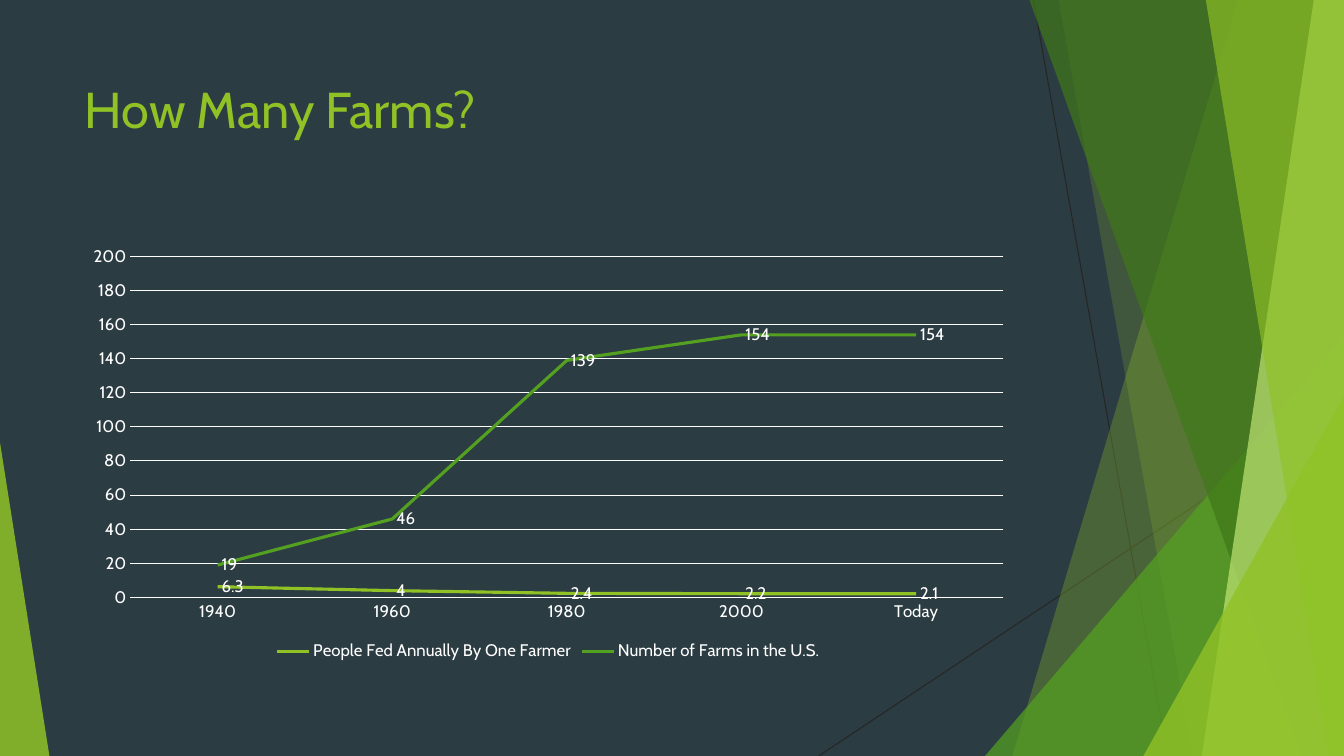
"""Build the "How Many Farms?" slide: a line chart on a faceted green backdrop."""
import pptx
import pptx.chart.data
import pptx.dml.color
import pptx.enum.chart
import pptx.enum.shapes
import pptx.enum.text
import pptx.oxml
import pptx.oxml.ns
import pptx.util

WIDTH, HEIGHT = 13.33, 7.5
FONT = "Cabin"
BACKGROUND, LIME, GREEN, WHITE, DARK = "2C3C43", "90C226", "54A021", "FFFFFF", "262626"

TITLE = "How Many Farms?"
CATEGORIES = ["1940", "1960", "1980", "2000", "Today"]
SERIES = [
    ("People Fed Annually By One Farmer", [6.3, 4, 2.4, 2.2, 2.2], LIME),
    ("Number of Farms in the U.S.", [19, 46, 139, 154, 154], GREEN),
]
TODAY_LABEL = "2.1"

CONTENT_LEFT, CONTENT_WIDTH = 0.74, 9.4
TITLE_TOP, TITLE_HEIGHT = 0.72, 1.44
CHART_TOP, CHART_HEIGHT = 2.36, 4.24

RAYS = [((10.25, 0), (11.58, HEIGHT)), ((WIDTH, 4.03), (8.12, HEIGHT))]
# kind, geometry, colour, opacity: bands give top and bottom x, triangles left, top, apex
FACETS = [
    ("band", (12.28, 10.04), LIME, 30),
    ("band", (10.5, 11.83), LIME, 20),
    ("triangle", (9.77, WIDTH, 3.33, 1), GREEN, 72),
    ("band", (10.21, 12.91), "3F7819", 70),
    ("band", (13.03, 11.92), "C0E474", 70),
    ("band", (11.96, 13.18), LIME, 65),
    ("triangle", (11.34, WIDTH, 3.93, 1), LIME, 80),
    ("triangle", (0, 0.49, 4.39, 0), LIME, 85),
]


def inches(*lengths):
    return [pptx.util.Inches(length) for length in lengths]


def color(value):
    return pptx.dml.color.RGBColor.from_string(value)


def set_font(font, size, value=WHITE):
    font.name = FONT
    font.size = pptx.util.Pt(size)
    font.bold = False
    font.color.rgb = color(value)


def set_line(line, value, width):
    line.color.rgb = color(value)
    line.width = pptx.util.Pt(width)


def add_ray(slide, start, end):
    ray = slide.shapes.add_connector(
        pptx.enum.shapes.MSO_CONNECTOR.STRAIGHT, *inches(*start, *end))
    set_line(ray.line, DARK, 0.75)
    properties = ray._element.spPr
    properties.append(pptx.oxml.parse_xml(
        "<a:effectLst %s/>" % pptx.oxml.ns.nsdecls("a")))


def add_facet(slide, kind, geometry, value, opacity):
    if kind == "band":
        top_x, bottom_x = geometry
        builder = slide.shapes.build_freeform(
            *inches(top_x, 0), scale=1.0)
        corners = [(WIDTH, 0), (WIDTH, HEIGHT), (bottom_x, HEIGHT)]
        builder.add_line_segments([inches(*corner) for corner in corners], close=True)
        facet = builder.convert_to_shape()
    else:
        left, right, top, apex = geometry
        facet = slide.shapes.add_shape(
            pptx.enum.shapes.MSO_SHAPE.ISOSCELES_TRIANGLE,
            *inches(left, top, right - left, HEIGHT - top))
        facet.adjustments[0] = apex
    facet.shadow.inherit = False
    facet.line.fill.background()
    facet.fill.solid()
    facet.fill.fore_color.rgb = color(value)
    fill_color = facet._element.spPr.find(".//" + pptx.oxml.ns.qn("a:srgbClr"))
    fill_color.append(pptx.oxml.parse_xml(
        '<a:alpha %s val="%d"/>' % (pptx.oxml.ns.nsdecls("a"), opacity * 1000)))


def format_title(title):
    title.left, title.top, title.width, title.height = inches(
        CONTENT_LEFT, TITLE_TOP, CONTENT_WIDTH, TITLE_HEIGHT)
    frame = title.text_frame
    frame.text = TITLE
    frame.word_wrap = True
    frame.auto_size = pptx.enum.text.MSO_AUTO_SIZE.NONE
    frame.vertical_anchor = pptx.enum.text.MSO_ANCHOR.TOP
    paragraph = frame.paragraphs[0]
    paragraph.alignment = pptx.enum.text.PP_ALIGN.LEFT
    set_font(paragraph.runs[0].font, 36, LIME)


def add_farm_chart(slide):
    data = pptx.chart.data.CategoryChartData()
    data.categories = CATEGORIES
    for name, values, _ in SERIES:
        data.add_series(name, values)
    chart = slide.shapes.add_chart(
        pptx.enum.chart.XL_CHART_TYPE.LINE,
        *inches(CONTENT_LEFT, CHART_TOP, CONTENT_WIDTH, CHART_HEIGHT), data).chart
    set_font(chart.font, 10)
    chart.has_title = False
    chart.has_legend = True
    chart.legend.position = pptx.enum.chart.XL_LEGEND_POSITION.BOTTOM
    chart.legend.include_in_layout = False
    set_font(chart.legend.font, 12)

    for axis in (chart.category_axis, chart.value_axis):
        axis.major_tick_mark = pptx.enum.chart.XL_TICK_MARK.NONE
        axis.minor_tick_mark = pptx.enum.chart.XL_TICK_MARK.NONE
        set_font(axis.tick_labels.font, 12)
    set_line(chart.category_axis.format.line, WHITE, 0.75)
    scale = chart.value_axis
    scale.minimum_scale, scale.maximum_scale, scale.major_unit = 0, 200, 20
    scale.format.line.fill.background()
    set_line(scale.major_gridlines.format.line, WHITE, 0.75)

    right = pptx.enum.chart.XL_LABEL_POSITION.RIGHT
    for series, (_, _, value) in zip(chart.plots[0].series, SERIES):
        series.smooth = False
        set_line(series.format.line, value, 2.25)
        labels = series.data_labels
        labels.show_value = True
        labels.position = right
        set_font(labels.font, 12)

    today = chart.plots[0].series[0].points[len(CATEGORIES) - 1].data_label
    today.text_frame.text = TODAY_LABEL
    set_font(today.text_frame.paragraphs[0].runs[0].font, 12)
    today.position = right


def main():
    presentation = pptx.Presentation()
    presentation.slide_width, presentation.slide_height = inches(WIDTH, HEIGHT)
    slide = presentation.slides.add_slide(presentation.slide_layouts[5])
    slide.background.fill.solid()
    slide.background.fill.fore_color.rgb = color(BACKGROUND)
    for start, end in RAYS:
        add_ray(slide, start, end)
    for facet in FACETS:
        add_facet(slide, *facet)
    format_title(slide.shapes.title)
    add_farm_chart(slide)
    presentation.save("out.pptx")


if __name__ == "__main__":
    main()
